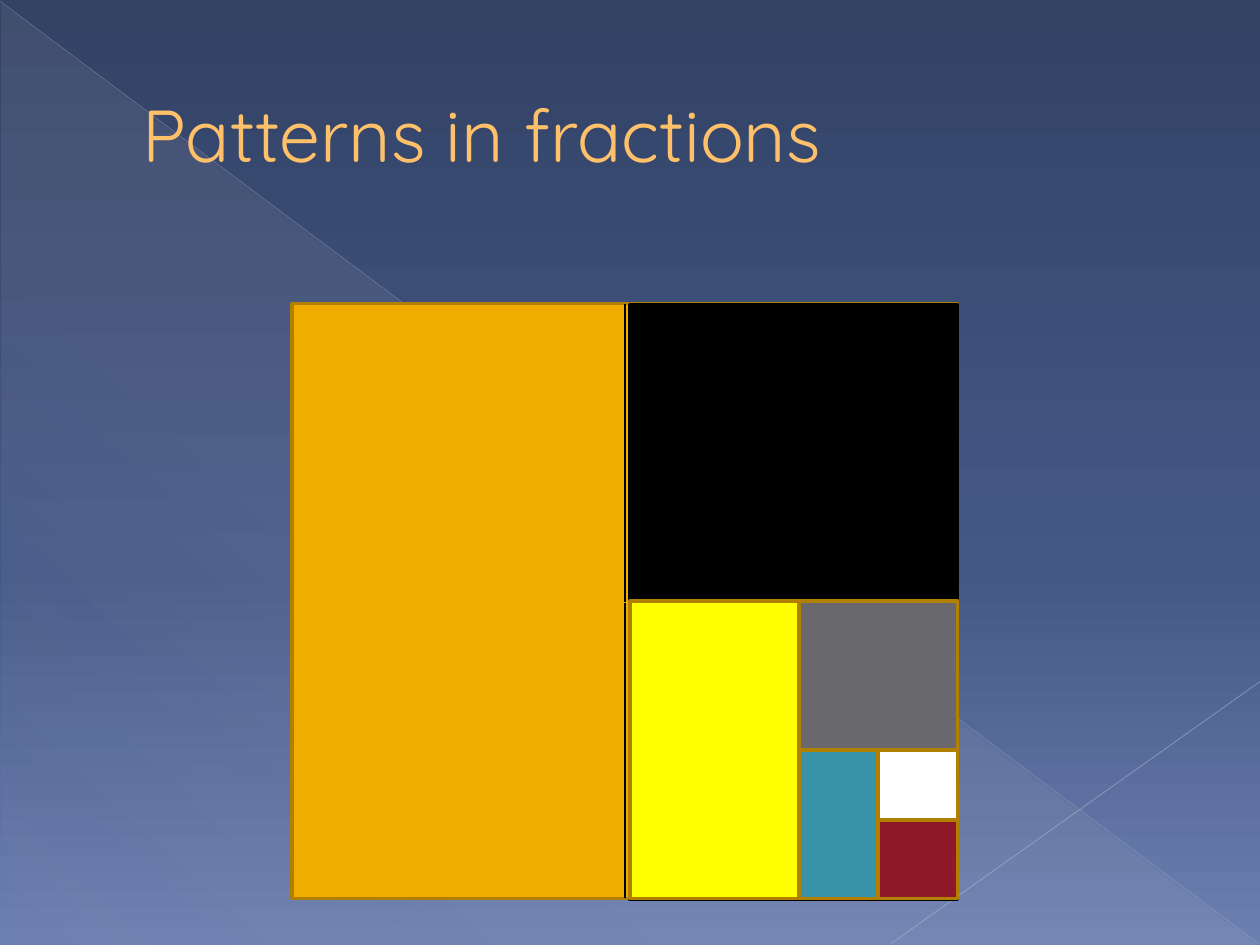
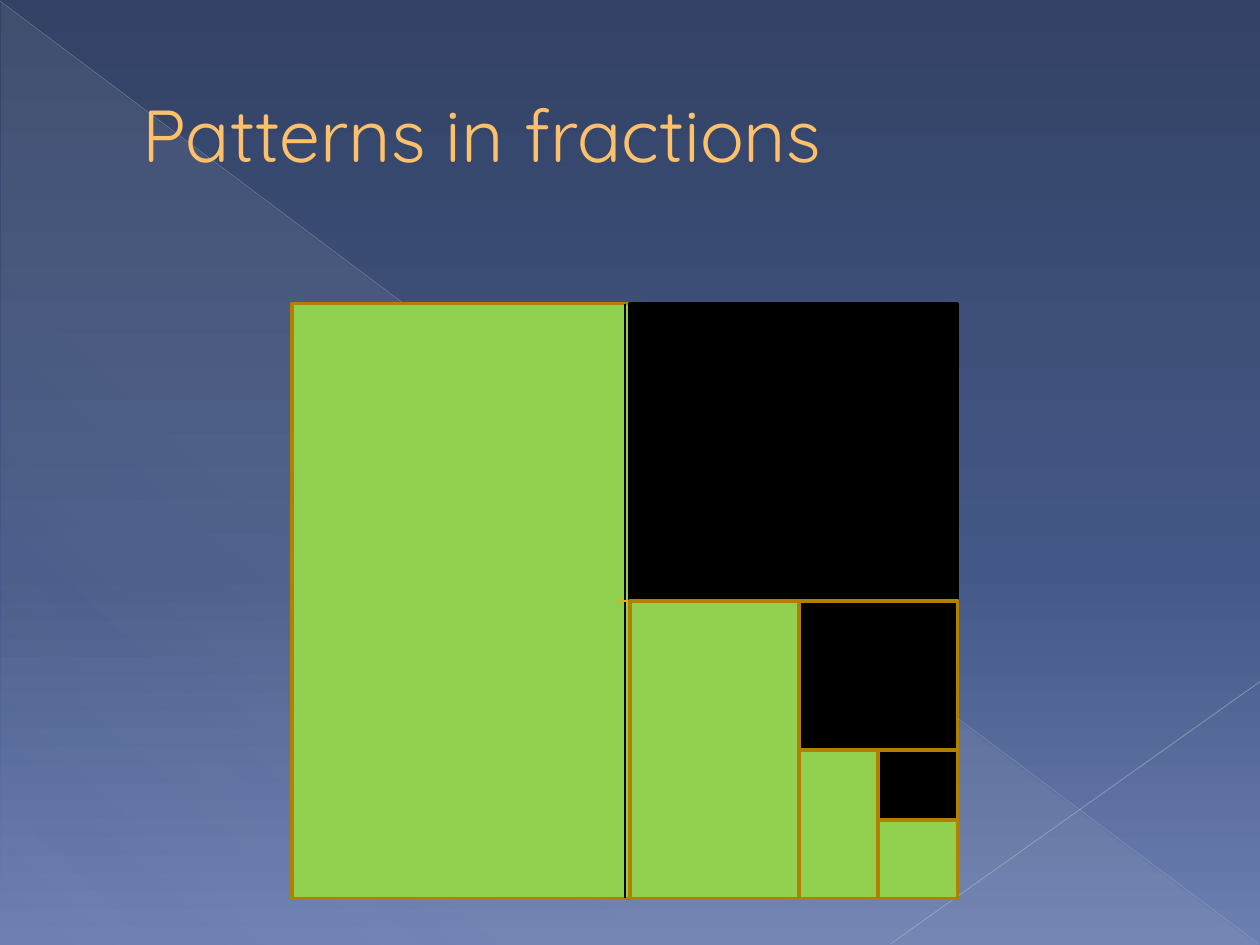
from collections import namedtuple

from lxml import etree
from pptx import Presentation
from pptx.dml.color import RGBColor
from pptx.enum import shapes, text
from pptx.oxml import ns
from pptx.util import Pt

NAVY = RGBColor(0x33, 0x42, 0x65)
INDIGO = RGBColor(0x44, 0x58, 0x87)
PERIWINKLE = RGBColor(0x6C, 0x7F, 0xB1)
MIST = RGBColor(0xD4, 0xD4, 0xD6)
DIAGONAL_GRAY = RGBColor(0xB9, 0xBD, 0xC8)
CORNER_GRAY = RGBColor(0xC1, 0xC4, 0xCE)
APRICOT = RGBColor(0xFF, 0xC0, 0x6A)
TITLE_EDGE = RGBColor(0xA6, 0x78, 0x00)
AMBER = RGBColor(0xF0, 0xAD, 0x00)
BRONZE = RGBColor(0xB2, 0x80, 0x00)
BLACK = RGBColor(0, 0, 0)
YELLOW = RGBColor(0xFF, 0xFF, 0)
GRAY = RGBColor(0x68, 0x68, 0x6D)
TEAL = RGBColor(0x37, 0x92, 0xAA)
WHITE = RGBColor(0xFF, 0xFF, 0xFF)
CRIMSON = RGBColor(0x90, 0x19, 0x29)
GREEN = RGBColor(0x92, 0xD0, 0x50)

FONT = "Quicksand"
Box = namedtuple("Box", "left top width height")
PAGE_BOX = Box(0, 0, 720, 540)
TITLE_BOX = Box(36, 20.9, 648, 110.2)
SQUARE_BOX = Box(167, 173.5, 380.2, 339.9)
PIECE_CORNERS = [(0, 0), (193, 0), (193, 170), (289.5, 170),
                 (289.5, 255), (334.8, 255), (334.8, 295.2)]
MIXED = [AMBER, BLACK, YELLOW, GRAY, TEAL, WHITE, CRIMSON]
ALTERNATING = [GREEN, BLACK, GREEN, BLACK, GREEN, BLACK, GREEN]


def add_color(parent, color, opacity=100):
    node = etree.SubElement(parent, ns.qn("a:srgbClr"), val=str(color))
    if opacity < 100:
        etree.SubElement(node, ns.qn("a:alpha"), val=str(opacity * 1000))


def set_gradient(fill, owner, stops, angle):
    fill.gradient()
    fill.gradient_angle = 360 - angle
    stop_list = owner.find(".//" + ns.qn("a:gsLst"))
    for stop in list(stop_list):
        stop_list.remove(stop)
    for position, color, opacity in stops:
        stop = etree.SubElement(stop_list, ns.qn("a:gs"), pos=str(position * 1000))
        add_color(stop, color, opacity)


def add_line(page, start, end, color, width, opacity=100):
    line = page.shapes.add_connector(
        shapes.MSO_CONNECTOR.STRAIGHT, *(Pt(value) for value in (*start, *end)))
    line.line.width = Pt(width)
    line.line.color.rgb = color
    if opacity < 100:
        node = line.element.find(".//" + ns.qn("a:srgbClr"))
        etree.SubElement(node, ns.qn("a:alpha"), val=str(opacity * 1000))
    etree.SubElement(line.element.spPr, ns.qn("a:effectLst"))
    return line


def add_preset(page, preset, box):
    shape = page.shapes.add_shape(preset, *(Pt(value) for value in box))
    shape.shadow.inherit = False
    return shape


def decorate_master(master, page, box):
    set_gradient(master.background.fill, master.element,
                 [(0, NAVY, 100), (60, INDIGO, 100), (100, PERIWINKLE, 100)], 90)
    right, bottom = box.left + box.width, box.top + box.height
    triangle = add_preset(page, shapes.MSO_SHAPE.RIGHT_TRIANGLE,
                          Box(box.left + 0.7, box.top + 1.4, box.width - 1.4, box.height - 1.4))
    triangle.line.fill.background()
    set_gradient(triangle.fill, triangle.element,
                 [(0, MIST, 10), (70, MIST, 8), (100, MIST, 1)], 133)
    diagonal = add_line(page, (box.left, box.top + 0.7), (right - 0.7, bottom - 0.7),
                        DIAGONAL_GRAY, 0.39, 35)
    corner = add_line(page, (right, bottom - 150.5), (right - 211, bottom - 0.7),
                      CORNER_GRAY, 0.47, 45)
    for index, shape in enumerate((triangle, diagonal, corner), 2):
        master.element.cSld.spTree.insert(index, shape.element)


def add_title(page, box, words):
    title = page.shapes.title
    title.left, title.top, title.width, title.height = (Pt(value) for value in box)
    frame = title.text_frame
    frame.text = words
    frame.auto_size = text.MSO_AUTO_SIZE.NONE
    frame.vertical_anchor = text.MSO_ANCHOR.MIDDLE
    frame.margin_left = Pt(45.4)
    para = frame.paragraphs[0]
    para.alignment = text.PP_ALIGN.LEFT
    para.font.name = FONT
    para.font.size = Pt(42)
    para.font.color.rgb = APRICOT
    outline = etree.Element(ns.qn("a:ln"), w=str(Pt(0.5)))
    add_color(etree.SubElement(outline, ns.qn("a:solidFill")), TITLE_EDGE)
    title.element.find(".//" + ns.qn("a:defRPr")).insert(0, outline)


def add_piece(page, box, corner, color, edge, drop=0):
    across, down = corner
    piece = add_preset(page, shapes.MSO_SHAPE.RECTANGLE,
                       Box(box.left + across, box.top + down + drop,
                           box.width - across, box.height - down))
    piece.fill.solid()
    piece.fill.fore_color.rgb = color
    piece.line.color.rgb = edge
    piece.line.width = Pt(2)


def add_fraction_square(page, box, colors, drop):
    whole, quarter, *smaller = zip(PIECE_CORNERS, colors)
    add_piece(page, box, *whole, BRONZE)
    middle = box.left + box.width / 2
    add_line(page, (middle, box.top), (middle, box.top + box.height), BLACK, 0.75)
    add_piece(page, box, *quarter, BLACK, drop)
    half_down = box.top + box.height / 2 + drop
    add_line(page, (box.left + 187.2, half_down), (box.left + box.width, half_down), AMBER, 0.75)
    for corner, color in smaller:
        add_piece(page, box, corner, color, BRONZE)


def main():
    deck = Presentation()
    deck.slide_width, deck.slide_height = Pt(PAGE_BOX.width), Pt(PAGE_BOX.height)
    for colors, drop in ((MIXED, 0.7), (ALTERNATING, 0)):
        page = deck.slides.add_slide(deck.slide_layouts[5])
        add_title(page, TITLE_BOX, "Patterns in fractions")
        add_fraction_square(page, SQUARE_BOX, colors, drop)
    decorate_master(deck.slide_master, deck.slides[0], PAGE_BOX)
    deck.save("out.pptx")


if __name__ == "__main__":
    main()
